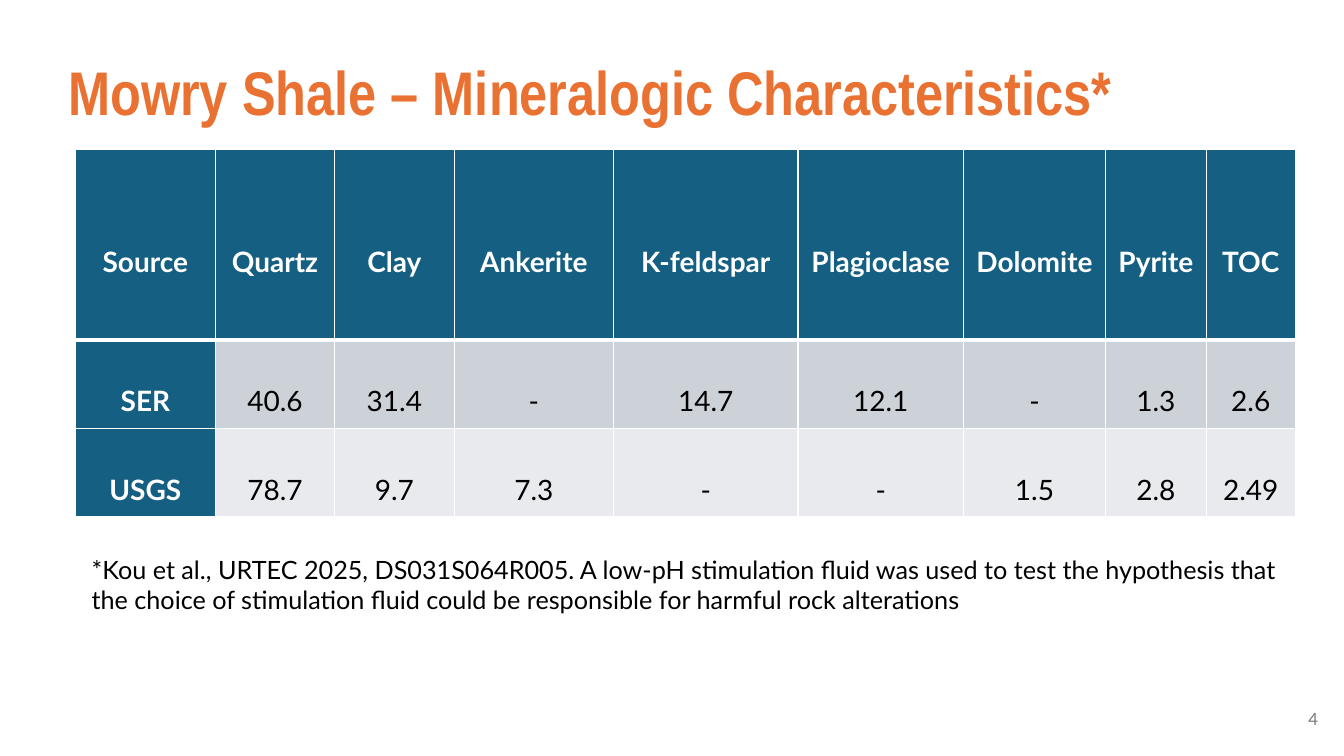
from lxml import etree
from pptx import Presentation
from pptx.dml.color import RGBColor
from pptx.enum.text import MSO_ANCHOR, MSO_AUTO_SIZE, PP_ALIGN
from pptx.oxml.ns import qn
from pptx.util import Cm, Pt

TOP, MID = MSO_ANCHOR.TOP, MSO_ANCHOR.MIDDLE
LEFT, MIDST, RIGHT = PP_ALIGN.LEFT, PP_ALIGN.CENTER, PP_ALIGN.RIGHT
GROW, FIXED = MSO_AUTO_SIZE.SHAPE_TO_FIT_TEXT, MSO_AUTO_SIZE.NONE

BLUE, WHITE, BLACK = "156082", "FFFFFF", "000000"
BANDS = [BLUE, "CCD2D8", "E8EAED"]
HEAD = {"name": "Arial Narrow", "size": Pt(44), "bold": True}
NOTE = {"name": "Lato", "size": Pt(18)}
PAGE = {"name": "Lato", "size": Pt(12)}
CELL = {"name": "Lato", "size": Pt(20)}

COLS = [3.53, 3, 3.02, 4.01, 4.65, 4.17, 3.58, 2.54, 2.24]
ROWS = [4.8, 2.23, 2.23]
DATA = [
    ["Source", "Quartz", "Clay", "Ankerite", "K-feldspar",
     "Plagioclase", "Dolomite", "Pyrite", "TOC"],
    ["SER", "40.6", "31.4", "-", "14.7", "12.1", "-", "1.3", "2.6"],
    ["USGS", "78.7", "9.7", "7.3", "-", "-", "1.5", "2.8", "2.49"],
]


def tint(code):
    return RGBColor.from_string(code)


def apply(item, form):
    for key, value in form.items():
        setattr(item, key, value)


def write(frame, text, font, color, para):
    line = frame.paragraphs[0]
    line.text = text
    apply(line, para)
    apply(line.font, font)
    line.font.color.rgb = tint(color)


def label(slide, box, text, font, color, para, anchor=TOP, fit=FIXED):
    frame = slide.shapes.add_textbox(*map(Cm, box)).text_frame
    apply(frame, {"word_wrap": True, "auto_size": fit,
                  "vertical_anchor": anchor})
    write(frame, text, font, color, para)


def edge(cell, side, width):
    line = etree.SubElement(cell._tc.get_or_add_tcPr(), qn("a:ln" + side),
                            w=str(Pt(width)))
    fill = etree.SubElement(line, qn("a:solidFill"))
    etree.SubElement(fill, qn("a:srgbClr"), val=WHITE)


def fill_cell(cell, text, row, col):
    # Borders come before the fill; a thick rule runs below the header
    for side in "LRTB":
        thick = (row, side) in [(0, "B"), (1, "T")]
        edge(cell, side, 3 if thick else 1)
    title = row == 0 or col == 0
    cell.fill.solid()
    cell.fill.fore_color.rgb = tint(BLUE if title else BANDS[row])
    apply(cell, {"vertical_anchor": MID, "margin_left": Cm(0.17),
                 "margin_right": Cm(0.17), "margin_top": 0,
                 "margin_bottom": 0})
    write(cell.text_frame, text, CELL | {"bold": title},
          WHITE if title else BLACK,
          {"alignment": MIDST, "line_spacing": 2.0, "space_after": Pt(8)})


def minerals(slide, left, top):
    table = slide.shapes.add_table(
        len(ROWS), len(COLS), Cm(left), Cm(top),
        Cm(sum(COLS)), Cm(sum(ROWS))).table
    for col, width in zip(table.columns, COLS):
        col.width = Cm(width)
    for row, height in zip(table.rows, ROWS):
        row.height = Cm(height)
    for r, texts in enumerate(DATA):
        for c, text in enumerate(texts):
            fill_cell(table.cell(r, c), text, r, c)


def main():
    deck = Presentation()
    deck.slide_width, deck.slide_height = Cm(33.87), Cm(19.05)
    slide = deck.slides.add_slide(deck.slide_layouts[6])

    # Title
    label(slide, (1.47, 1.45, 30.48, 3.68),
          "Mowry Shale – Mineralogic Characteristics*",
          HEAD, "E97132", {"alignment": LEFT, "line_spacing": 0.9})

    # Page number
    label(slide, (31.95, 17.6, 1.52, 1.02), "4",
          PAGE, "797979", {"alignment": RIGHT}, MID)

    # Mineral table
    minerals(slide, 1.9, 3.76)

    # Footnote
    label(slide, (2.06, 13.84, 30.63, 1.8),
          "*Kou et al., URTEC 2025, DS031S064R005. A low-pH stimulation "
          "fluid was used to test the hypothesis that the choice of "
          "stimulation fluid could be responsible for harmful rock "
          "alterations",
          NOTE, BLACK, {"alignment": LEFT}, fit=GROW)

    deck.save("out.pptx")


if __name__ == "__main__":
    main()
